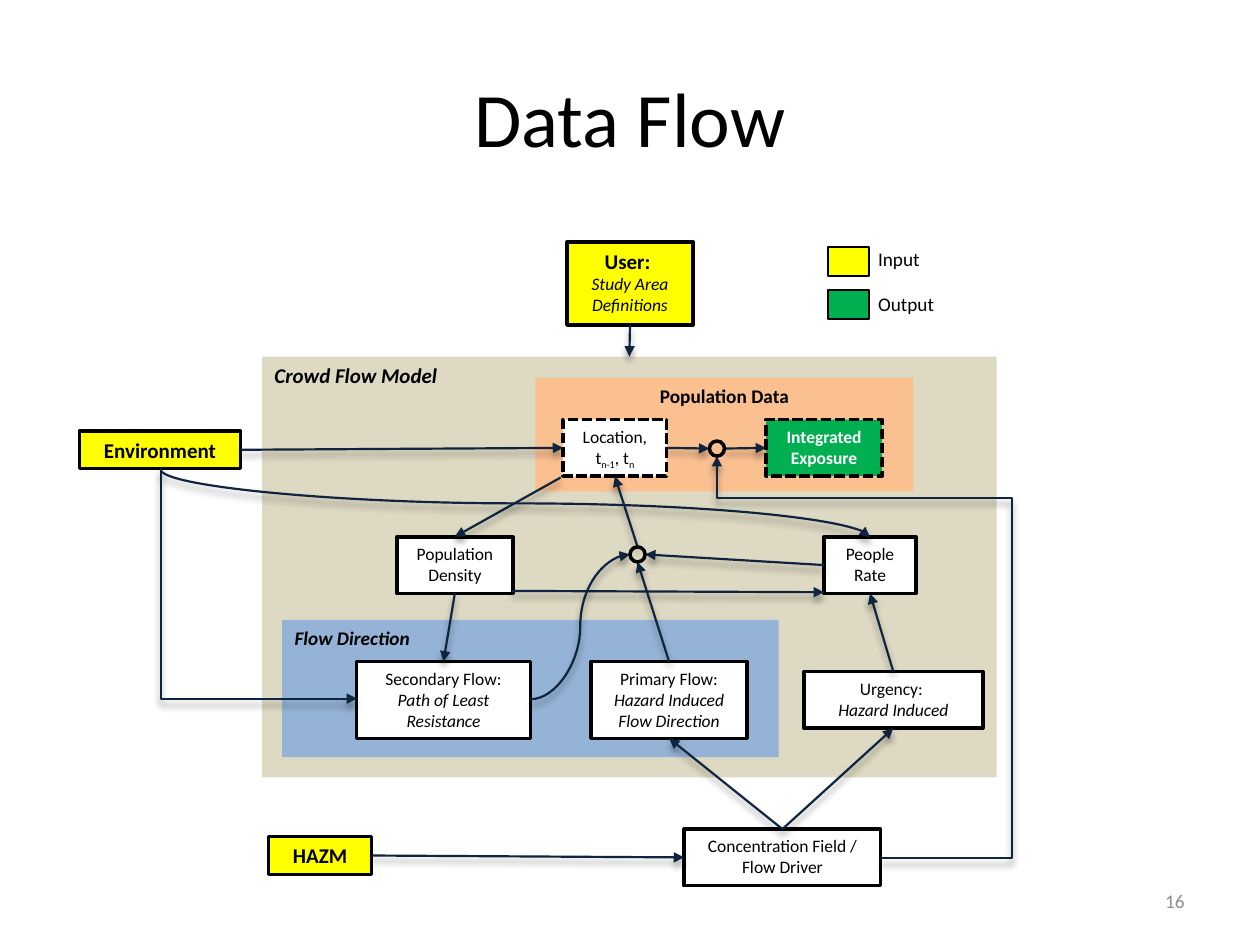
import pptx
import pptx.dml.color
import pptx.enum.dml
import pptx.enum.shapes
import pptx.enum.text
import pptx.oxml
import pptx.oxml.ns
import pptx.util

RGBColor = pptx.dml.color.RGBColor
SHAPE = pptx.enum.shapes.MSO_SHAPE
CONNECTOR = pptx.enum.shapes.MSO_CONNECTOR
ALIGN = pptx.enum.text.PP_ALIGN
ANCHOR = pptx.enum.text.MSO_ANCHOR

PX = 9144  # EMU in one px, 100 px to the inch
FONT = "Calibri"

BLACK = RGBColor(0x00, 0x00, 0x00)
WHITE = RGBColor(0xFF, 0xFF, 0xFF)
GREY = RGBColor(0x8C, 0x8C, 0x8C)
TAN = RGBColor(0xDD, 0xD9, 0xC3)
BLUE = RGBColor(0x95, 0xB3, 0xD7)
ORANGE = RGBColor(0xFA, 0xC0, 0x90)
YELLOW = RGBColor(0xFF, 0xFF, 0x00)
GREEN = RGBColor(0x00, 0xB0, 0x50)
NAVY = RGBColor(0x0F, 0x24, 0x3E)

TOP, LEFT, BOTTOM, RIGHT = range(4)

SHADOW = (
    f'<a:effectLst {pptx.oxml.ns.nsdecls("a")}>'
    '<a:outerShdw blurRad="50800" dist="38100" dir="5400000" rotWithShape="0">'
    '<a:srgbClr val="000000"><a:alpha val="40000"/></a:srgbClr>'
    "</a:outerShdw></a:effectLst>"
)


def emu(*lengths):
    return [length * PX for length in lengths]


def style_run(run, size, color=BLACK, style=""):
    """Style is any of the letters b (bold) and i (italic)."""
    run.font.name = FONT
    run.font.size = pptx.util.Pt(size)
    run.font.color.rgb = color
    run.font.bold = "b" in style
    run.font.italic = "i" in style


def write(shape, lines, color=BLACK, align=ALIGN.CENTER, anchor=ANCHOR.TOP):
    """Each line is a paragraph: (text, size, style)."""
    frame = shape.text_frame
    frame.word_wrap = True
    frame.vertical_anchor = anchor
    frame.text = "\n".join(text for text, _, _ in lines)
    for paragraph, (_, size, style) in zip(frame.paragraphs, lines):
        paragraph.alignment = align
        for run in paragraph.runs:
            style_run(run, size, color, style)


def add_block(shapes, at, fill=None, line=None, kind=SHAPE.RECTANGLE):
    block = shapes.add_shape(kind, *emu(*at))
    block.shadow.inherit = False
    if fill is None:
        block.fill.background()
    else:
        block.fill.solid()
        block.fill.fore_color.rgb = fill
    if line is None:
        block.line.fill.background()
    else:
        block.line.color.rgb = BLACK
        block.line.width = pptx.util.Pt(line)
    return block


def add_panel(shapes, at, fill, title, size, style, align=ALIGN.LEFT):
    panel = add_block(shapes, at, fill)
    write(panel, [(title, size, style)], align=align)
    return panel


def add_box(shapes, at, *lines, fill=WHITE, color=BLACK, dashed=False):
    box = add_block(shapes, at, fill, line=2)
    if dashed:
        box.line.dash_style = pptx.enum.dml.MSO_LINE.SQUARE_DOT
    write(box, lines, color)
    return box


def add_label(shapes, at, text, size, color=BLACK, align=ALIGN.LEFT, anchor=ANCHOR.TOP):
    label = shapes.add_textbox(*emu(*at))
    write(label, [(text, size, "")], color, align, anchor)


def style_arrow(arrow):
    arrow.line.color.rgb = NAVY
    arrow.line.width = pptx.util.Pt(1.25)
    properties = arrow._element.spPr
    head = f'<a:tailEnd {pptx.oxml.ns.nsdecls("a")} type="triangle"/>'
    properties.find(pptx.oxml.ns.qn("a:ln")).append(pptx.oxml.parse_xml(head))
    properties.append(pptx.oxml.parse_xml(SHADOW))


def add_arrow(shapes, start, end):
    """An end is a point (x, y), or a box and the side it is joined to."""
    points = [(0, 0) if hasattr(e[0], "shape_id") else e for e in (start, end)]
    arrow = shapes.add_connector(CONNECTOR.STRAIGHT, *emu(*points[0], *points[1]))
    if hasattr(start[0], "shape_id"):
        arrow.begin_connect(*start)
    if hasattr(end[0], "shape_id"):
        arrow.end_connect(*end)
    style_arrow(arrow)


def add_route(shapes, kind, preset, start, end, turn=0, adjust=()):
    """A bent or curved arrow; start and end are corners of its unturned frame."""
    route = shapes.add_connector(kind, *emu(*start, *end))
    style_arrow(route)
    properties = route._element.spPr
    if turn:
        properties.find(pptx.oxml.ns.qn("a:xfrm")).set("rot", str(turn * 60000))
    geometry = properties.find(pptx.oxml.ns.qn("a:prstGeom"))
    geometry.set("prst", preset)
    guides = geometry.find(pptx.oxml.ns.qn("a:avLst"))
    for number, value in enumerate(adjust, 1):
        guide = guides.makeelement(pptx.oxml.ns.qn("a:gd"), {})
        guide.set("name", f"adj{number}")
        guide.set("fmla", f"val {value}")
        guides.append(guide)


def add_legend(shapes):
    legend = shapes.add_group_shape().shapes
    for text, fill, key_top, text_top in (("Input", YELLOW, 196, 191),
                                          ("Output", GREEN, 230, 227)):
        add_block(legend, (657, key_top, 33, 23), fill, 1, SHAPE.FLOWCHART_PROCESS)
        add_label(legend, (687, text_top, 88, 29), text, 11)


def add_location(shapes):
    location = add_box(shapes, (447, 333, 82, 45), ("Location, t", 10, ""), dashed=True)
    for text, subscript in (("n-1", True), (", t", False), ("n", True)):
        run = location.text_frame.paragraphs[0].add_run()
        run.text = text
        style_run(run, 10)
        if subscript:
            run._r.get_or_add_rPr().set("baseline", "-25000")
    return location


def main():
    deck = pptx.Presentation()
    deck.slide_width, deck.slide_height = emu(1000, 750)
    slide = deck.slides.add_slide(deck.slide_layouts[5])
    shapes = slide.shapes

    # Title and page number
    title = shapes.title
    title.left, title.top, title.width, title.height = emu(50, 30, 900, 125)
    write(title, [("Data Flow", 44, "")], anchor=ANCHOR.MIDDLE)
    add_label(shapes, (717, 695, 233, 40), "16", 11, GREY, ALIGN.RIGHT, ANCHOR.MIDDLE)

    # Panels
    model = add_panel(shapes, (208, 283, 583, 334), TAN, "Crowd Flow Model", 12, "bi")
    add_panel(shapes, (224, 492, 394, 109), BLUE, "Flow Direction", 11, "bi")
    add_panel(shapes, (425, 300, 300, 90), ORANGE, "Population Data", 11, "b", ALIGN.CENTER)

    # Model steps
    density = add_box(shapes, (315, 426, 92, 45), ("Population Density", 10, ""))
    primary = add_box(shapes, (469, 525, 124, 61), ("Primary Flow:", 10, ""),
                      ("Hazard Induced Flow Direction", 10, "i"))
    secondary = add_box(shapes, (283, 525, 138, 61), ("Secondary Flow:", 10, ""),
                        ("Path of Least Resistance", 10, "i"))
    driver = add_box(shapes, (543, 658, 156, 45), ("Concentration Field / Flow Driver", 10, ""))
    rate = add_box(shapes, (654, 426, 73, 45), ("People Rate", 10, ""))
    urgency = add_box(shapes, (638, 533, 142, 45), ("Urgency: ", 10, ""),
                      ("Hazard Induced", 10, "i"))
    location = add_location(shapes)

    # Inputs and output
    hazard = add_box(shapes, (213, 664, 82, 30), ("HAZM", 12, "b"), fill=YELLOW)
    user = add_box(shapes, (450, 192, 100, 66), ("User: ", 12, "b"),
                   ("Study Area Definitions", 10, "i"), fill=YELLOW)
    environment = add_box(shapes, (63, 342, 128, 30), ("Environment", 12, "b"), fill=YELLOW)
    exposure = add_box(shapes, (608, 333, 92, 45), ("Integrated Exposure", 10, "b"),
                       fill=GREEN, color=WHITE, dashed=True)

    # Straight flows
    for start, end in (
        ((user, BOTTOM), (model, TOP)),
        ((445, 379), (density, TOP)),
        ((density, BOTTOM), (secondary, TOP)),
        ((406, 469), (654, 470)),
        ((urgency, TOP), (rate, BOTTOM)),
        ((driver, TOP), (urgency, BOTTOM)),
        ((driver, TOP), (primary, BOTTOM)),
        ((hazard, RIGHT), (driver, LEFT)),
        ((environment, RIGHT), (location, LEFT)),
        ((location, RIGHT), (563, 356)),
        ((575, 356), (exposure, LEFT)),
        ((primary, TOP), (506, 446)),
        ((rate, LEFT), (512, 440)),
        ((506, 434), (location, BOTTOM)),
    ):
        add_arrow(shapes, start, end)

    # Secondary flow to junction, environment to both targets, driver to exposure
    add_route(shapes, CONNECTOR.CURVE, "curvedConnector3", (421, 555), (500, 440))
    add_route(shapes, CONNECTOR.ELBOW, "bentConnector2", (297, 385), (114, 541), 270)
    add_route(shapes, CONNECTOR.CURVE, "curvedConnector3", (436, 118), (382, 681), 270)
    add_route(shapes, CONNECTOR.ELBOW, "bentConnector4", (699, 681), (569, 362),
              adjust=(-80000, 89500))

    # Junctions
    for left, top in ((500, 434), (563, 350)):
        add_block(shapes, (left, top, 12, 12), line=2, kind=SHAPE.FLOWCHART_CONNECTOR)

    add_legend(shapes)
    deck.save("out.pptx")


if __name__ == "__main__":
    main()
